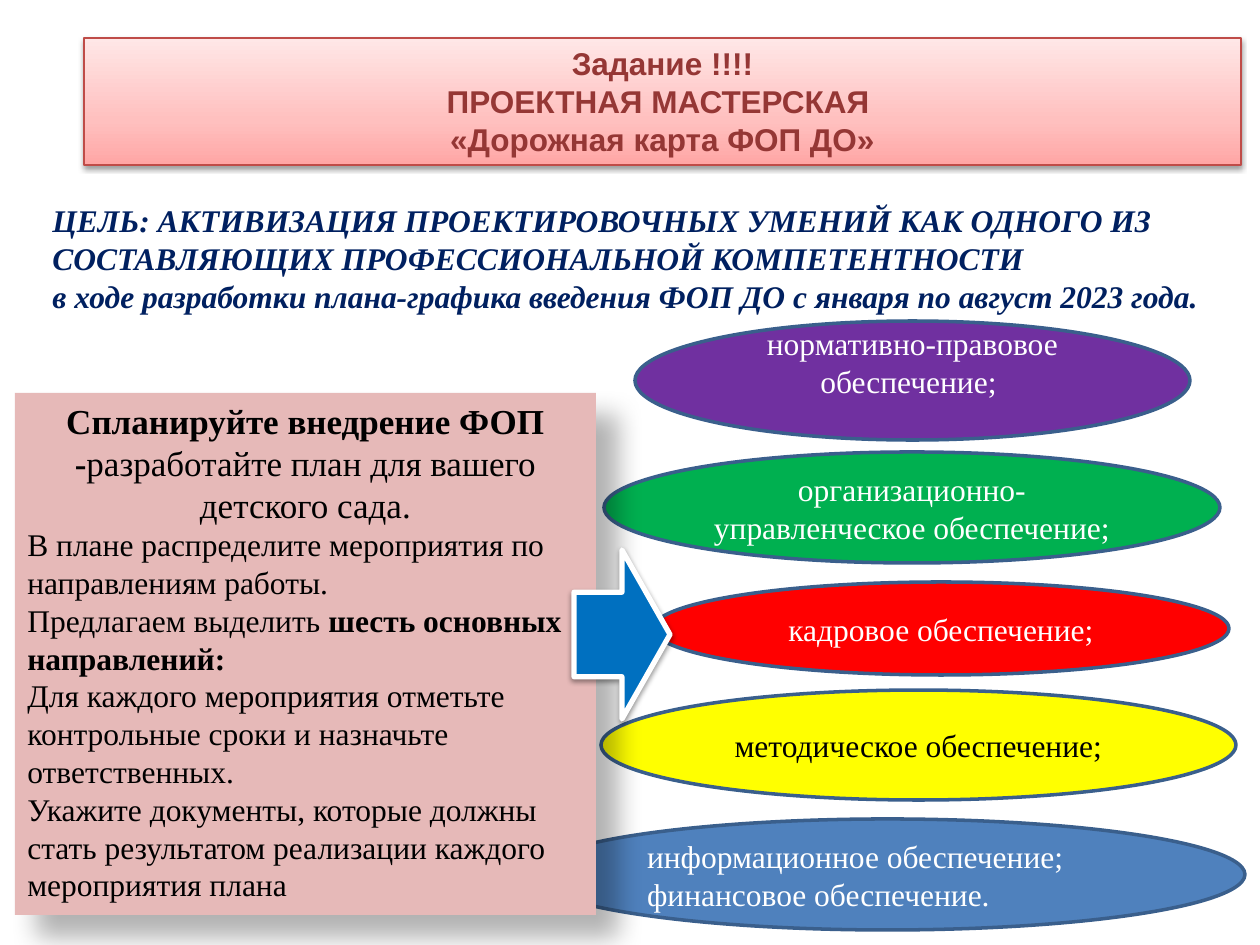
"""Build the project workshop slide with a task panel and five support areas."""
from lxml import etree
from pptx import Presentation
from pptx.dml.color import RGBColor
from pptx.enum.shapes import MSO_SHAPE as Shape
from pptx.enum.text import MSO_ANCHOR as Anchor, PP_ALIGN as Align
from pptx.oxml import parse_xml
from pptx.oxml.ns import nsdecls, qn
from pptx.util import Emu, Pt

PX = 914400 / 126
SERIF = "Times New Roman"
BLACK = RGBColor(0x00, 0x00, 0x00)
WHITE = RGBColor(0xFF, 0xFF, 0xFF)
MAROON = RGBColor(0x95, 0x37, 0x35)
NAVY = RGBColor(0x00, 0x20, 0x60)
CORAL = RGBColor(0xBF, 0x4C, 0x48)
PINK = RGBColor(0xE6, 0xB9, 0xB8)
STEEL = RGBColor(0x3A, 0x5F, 0x8C)
BLUE = RGBColor(0x4F, 0x81, 0xBD)
YELLOW = RGBColor(0xFF, 0xFF, 0x00)
RED = RGBColor(0xFF, 0x00, 0x00)
GREEN = RGBColor(0x00, 0xB0, 0x50)
PURPLE = RGBColor(0x70, 0x30, 0xA0)
ARROW_BLUE = RGBColor(0x00, 0x70, 0xC0)
TITLE_STOPS = [
    (0, RGBColor(0xFF, 0xA6, 0xA5)),
    (35, RGBColor(0xFF, 0xC0, 0xBF)),
    (100, RGBColor(0xFF, 0xE7, 0xE7)),
]
SOFT_SHADOW = dict(opacity=38, blur=3.1, distance=1.6, angle=90)
DEEP_SHADOW = dict(opacity=30, blur=15, distance=18, angle=45)

TITLE = ["Задание !!!!", "ПРОЕКТНАЯ МАСТЕРСКАЯ ", "«Дорожная карта ФОП ДО»"]
GOAL = [
    "ЦЕЛЬ: АКТИВИЗАЦИЯ ПРОЕКТИРОВОЧНЫХ УМЕНИЙ КАК ОДНОГО ИЗ "
    "СОСТАВЛЯЮЩИХ ПРОФЕССИОНАЛЬНОЙ КОМПЕТЕНТНОСТИ",
    "в ходе разработки плана-графика введения ФОП ДО с января по август 2023 года.",
]
AREAS = [
    ((530, 819, 715, 111), BLUE, WHITE, Align.LEFT, 6,
     ["информационное обеспечение;", "финансовое обеспечение."]),
    ((601, 690, 635, 110), YELLOW, BLACK, Align.CENTER, 6, ["методическое обеспечение;"]),
    ((653, 582, 576, 93), RED, WHITE, Align.CENTER, 6, ["кадровое обеспечение;"]),
    ((604, 452, 616, 111), GREEN, WHITE, Align.CENTER, 6,
     ["организационно-управленческое обеспечение;"]),
    ((635, 321, 555, 119), PURPLE, WHITE, Align.CENTER, 44,
     ["нормативно-правовое обеспечение; "]),
]
TASK = [
    (Align.CENTER, 20, [("Спланируйте внедрение ФОП", True)]),
    (Align.CENTER, 20, [("-", True), ("разработайте план для вашего детского сада.", False)]),
    (Align.LEFT, 18, [("В плане распределите мероприятия по направлениям работы.", False)]),
    (Align.LEFT, 18, [("Предлагаем выделить ", False), ("шесть основных направлений:", True)]),
    (Align.LEFT, 18, [("Для каждого мероприятия отметьте контрольные сроки "
                       "и назначьте ответственных.", False)]),
    (Align.LEFT, 18, [("Укажите документы, которые должны стать результатом "
                       "реализации каждого мероприятия плана", False)]),
]


def px(value):
    return Emu(round(value * PX))


def add_shape(slide, kind, box, fill=None, line=None, width=0):
    shape = slide.shapes.add_shape(kind, *map(px, box))
    shape.shadow.inherit = False
    if fill is None:
        shape.fill.background()
    else:
        shape.fill.solid()
        shape.fill.fore_color.rgb = fill
    if line is None:
        shape.line.fill.background()
    else:
        shape.line.color.rgb = line
        shape.line.width = Pt(width)
    return shape


def add_shadow(shape, opacity, blur, distance, angle):
    effects = shape._element.spPr.find(qn("a:effectLst"))
    outer = etree.SubElement(
        effects, qn("a:outerShdw"), blurRad=str(Pt(blur)), dist=str(Pt(distance)),
        dir=str(angle * 60000), algn="ctr", rotWithShape="0")
    color = etree.SubElement(outer, qn("a:srgbClr"), val=str(BLACK))
    etree.SubElement(color, qn("a:alpha"), val=str(opacity * 1000))


def set_gradient(shape, stops, angle):
    stop_xml = "".join(
        f'<a:gs pos="{position * 1000}"><a:srgbClr val="{color}"/></a:gs>'
        for position, color in stops)
    gradient = parse_xml(
        f'<a:gradFill {nsdecls("a")} rotWithShape="1"><a:gsLst>{stop_xml}</a:gsLst>'
        f'<a:lin ang="{angle * 60000}" scaled="0"/></a:gradFill>')
    properties = shape._element.spPr
    properties.replace(properties.find(qn("a:noFill")), gradient)


def plain(lines, align, bold=False):
    return [(align, 18, [(line, bold)]) for line in lines]


def write(shape, paragraphs, color, font=SERIF, italic=False, anchor=Anchor.TOP):
    frame = shape.text_frame
    frame.word_wrap = True
    frame.vertical_anchor = anchor
    for index, (align, size, runs) in enumerate(paragraphs):
        paragraph = frame.add_paragraph() if index else frame.paragraphs[0]
        paragraph.alignment = align
        for text, bold in runs:
            run = paragraph.add_run()
            run.text = text
            run.font.name = font
            run.font.size = Pt(size)
            run.font.bold = bold
            run.font.italic = italic
            run.font.color.rgb = color


def main():
    presentation = Presentation()
    presentation.slide_width, presentation.slide_height = px(1260), px(945)
    slide = presentation.slides.add_slide(presentation.slide_layouts[6])

    title = add_shape(slide, Shape.RECTANGLE, (84, 38, 1157, 127), line=CORAL, width=0.75)
    set_gradient(title, TITLE_STOPS, 270)
    add_shadow(title, **SOFT_SHADOW)
    write(title, plain(TITLE, Align.CENTER, True), MAROON, font="Arial")

    goal = slide.shapes.add_textbox(*map(px, (40, 195, 1206, 127)))
    write(goal, plain(GOAL, Align.LEFT, True), NAVY, italic=True)

    for box, fill, color, align, bottom, lines in AREAS:
        area = add_shape(slide, Shape.OVAL, box, fill, STEEL, 2)
        area.text_frame.margin_bottom = px(bottom)
        write(area, plain(lines, align), color, anchor=Anchor.MIDDLE)

    task = add_shape(slide, Shape.RECTANGLE, (15, 393, 581, 522), PINK)
    add_shadow(task, **DEEP_SHADOW)
    write(task, TASK, BLACK)

    arrow = add_shape(slide, Shape.RIGHT_ARROW, (574, 550, 96, 169), ARROW_BLUE, WHITE, 3)
    add_shadow(arrow, **SOFT_SHADOW)

    presentation.save("out.pptx")


if __name__ == "__main__":
    main()
